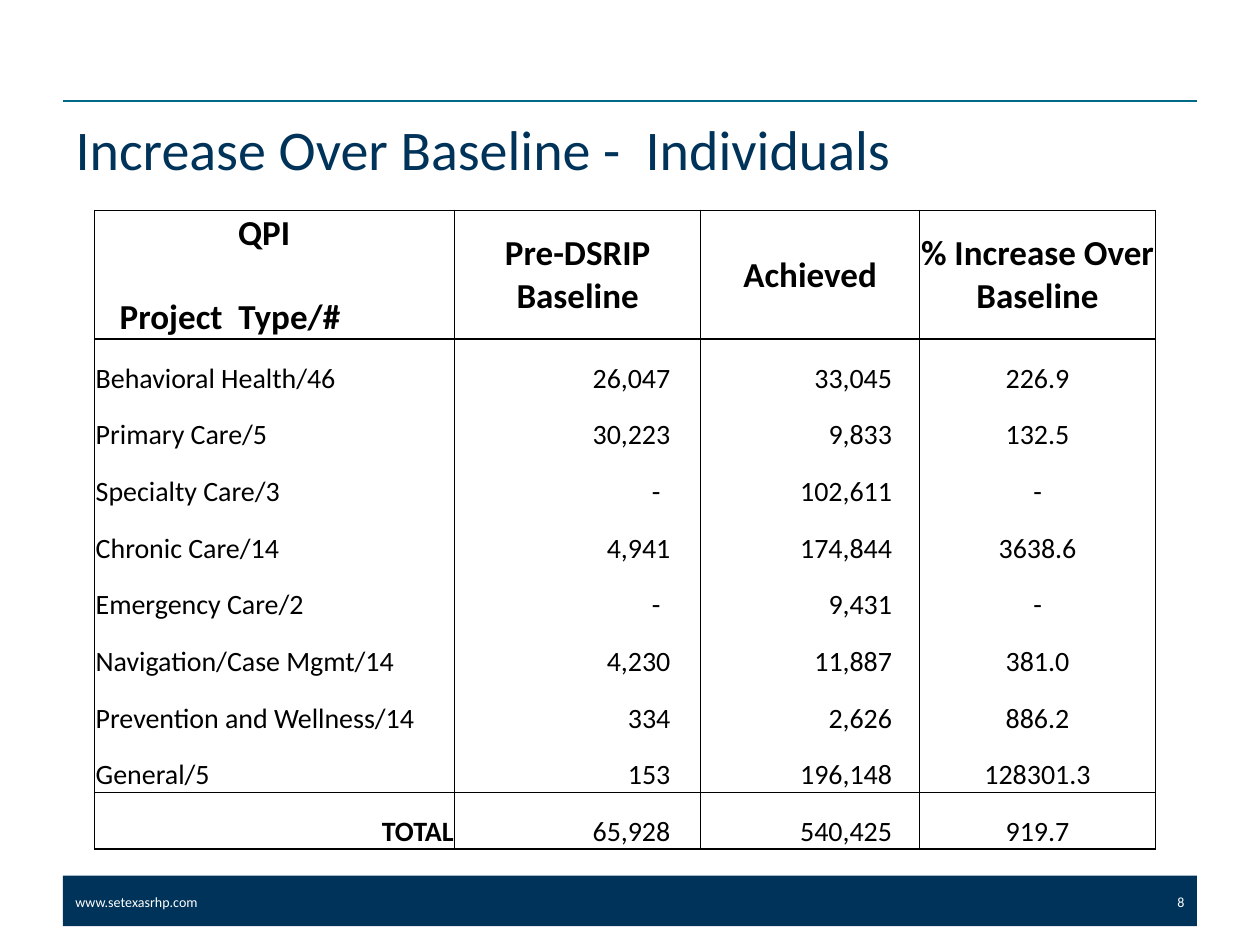
from dataclasses import dataclass

from lxml.etree import SubElement
from pptx import Presentation
from pptx.dml.color import RGBColor
from pptx.enum.shapes import MSO_CONNECTOR, MSO_SHAPE
from pptx.enum.text import MSO_ANCHOR, MSO_AUTO_SIZE, PP_ALIGN
from pptx.oxml.ns import qn
from pptx.util import Inches, Pt


@dataclass(frozen=True)
class Theme:
    face: str = "Calibri"
    navy: str = "003359"
    teal: str = "006983"
    black: str = "000000"
    white: str = "FFFFFF"
    title: int = 32
    head: int = 20
    body: int = 16
    foot: int = 8


THEME = Theme()
COLS = [2.86, 1.95, 1.74, 1.87]
HEAD_H, ROW_H = 1.02, 0.45
PAD = 0.01
INSETS = [PAD, 0.24, 0.22, PAD]
DASH_IN = 0.08
ALIGNS = [PP_ALIGN.LEFT, PP_ALIGN.RIGHT, PP_ALIGN.RIGHT, PP_ALIGN.CENTER]
HEADS = ["Pre-DSRIP Baseline", "Achieved", "% Increase Over Baseline"]
ROWS = [
    ["Behavioral Health/46", "26,047", "33,045", "226.9"],
    ["Primary Care/5", "30,223", "9,833", "132.5"],
    ["Specialty Care/3", "-", "102,611", "-"],
    ["Chronic Care/14", "4,941", "174,844", "3638.6"],
    ["Emergency Care/2", "-", "9,431", "-"],
    ["Navigation/Case Mgmt/14", "4,230", "11,887", "381.0"],
    ["Prevention and Wellness/14", "334", "2,626", "886.2"],
    ["General/5", "153", "196,148", "128301.3"],
    ["TOTAL", "65,928", "540,425", "919.7"],
]


def put(item, **values):
    for name, value in values.items():
        setattr(item, name, value)


def write(para, text, size, color, align=PP_ALIGN.LEFT, bold=False):
    run = para.add_run()
    run.text = text
    put(para, alignment=align)
    put(run.font, name=THEME.face, size=Pt(size), bold=bold)
    run.font.color.rgb = RGBColor.from_string(color)


def add_title(slide, text):
    title = slide.shapes.title
    put(title, left=Inches(0.5), top=Inches(0.8), width=Inches(9), height=Inches(0.75))
    frame = title.text_frame
    put(frame, vertical_anchor=MSO_ANCHOR.MIDDLE, auto_size=MSO_AUTO_SIZE.NONE)
    write(frame.paragraphs[0], text, THEME.title, THEME.navy)


def add_bar(slide):
    bar = slide.shapes.add_shape(
        MSO_SHAPE.RECTANGLE, Inches(0.5), Inches(6.95), Inches(9), Inches(0.4))
    bar.shadow.inherit = False
    bar.fill.solid()
    bar.fill.fore_color.rgb = RGBColor.from_string(THEME.navy)
    bar.line.fill.background()


def add_note(slide, text, left, width, align):
    box = slide.shapes.add_textbox(
        Inches(left), Inches(6.95), Inches(width), Inches(0.41))
    frame = box.text_frame
    put(frame, word_wrap=True, vertical_anchor=MSO_ANCHOR.MIDDLE)
    write(frame.paragraphs[0], text, THEME.foot, THEME.white, align)


def add_rule(slide):
    rule = slide.shapes.add_connector(
        MSO_CONNECTOR.STRAIGHT, Inches(0.5), Inches(0.8), Inches(9.5), Inches(0.8))
    rule.line.width = Pt(1)
    rule.line.color.rgb = RGBColor.from_string(THEME.teal)
    SubElement(rule._element.spPr, qn("a:effectLst"))


def edge(cell, side, width):
    line = SubElement(cell._tc.get_or_add_tcPr(), qn(f"a:ln{side}"), w=str(Pt(width)))
    if width:
        fill = SubElement(line, qn("a:solidFill"))
        SubElement(fill, qn("a:srgbClr"), val=THEME.black)
    else:
        SubElement(line, qn("a:noFill"))


def style(cell, row, col, anchor, inset=PAD):
    last = len(ROWS)
    widths = {
        "L": 0.5 if col else 1,
        "R": 0.5,
        "T": 1 if row in (0, 1, last) else 0,
        "B": 1 if row in (0, last - 1, last) else 0,
    }
    for side, width in widths.items():
        edge(cell, side, width)
    cell.fill.background()
    put(cell, vertical_anchor=anchor, margin_left=Inches(PAD),
        margin_right=Inches(inset), margin_top=Inches(PAD), margin_bottom=0)


def fill_head(table):
    first = table.cell(0, 0)
    style(first, 0, 0, MSO_ANCHOR.TOP)
    frame = first.text_frame
    paras = [frame.paragraphs[0], frame.add_paragraph()]
    for para, text, indent in zip(paras, ["QPI", "Project  Type/#"], [1.13, 0.19]):
        para._p.get_or_add_pPr().set("marL", str(Inches(indent)))
        write(para, text, THEME.head, THEME.black, bold=True)
    paras[1].space_before = Pt(24)
    for col, text in enumerate(HEADS, 1):
        cell = table.cell(0, col)
        style(cell, 0, col, MSO_ANCHOR.MIDDLE)
        write(cell.text_frame.paragraphs[0], text, THEME.head, THEME.black,
              PP_ALIGN.CENTER, True)


def fill_body(table):
    for row, texts in enumerate(ROWS, 1):
        for col, text in enumerate(texts):
            total = text == "TOTAL"
            align = PP_ALIGN.RIGHT if total else ALIGNS[col]
            inset = INSETS[col]
            if text == "-" and align == PP_ALIGN.RIGHT:
                inset += DASH_IN
            cell = table.cell(row, col)
            style(cell, row, col, MSO_ANCHOR.BOTTOM, inset)
            write(cell.text_frame.paragraphs[0], text, THEME.body, THEME.black,
                  align, total)


def add_grid(slide):
    count = len(ROWS) + 1
    table = slide.shapes.add_table(
        count, len(COLS), Inches(0.75), Inches(1.67), Inches(sum(COLS)),
        Inches(HEAD_H + ROW_H * len(ROWS))).table
    put(table, first_row=False, horz_banding=False)
    for col, width in zip(table.columns, COLS):
        col.width = Inches(width)
    for row, height in zip(table.rows, [HEAD_H] + [ROW_H] * len(ROWS)):
        row.height = Inches(height)
    fill_head(table)
    fill_body(table)


def main():
    deck = Presentation()
    put(deck, slide_width=Inches(10), slide_height=Inches(7.5))
    slide = deck.slides.add_slide(deck.slide_layouts[5])
    add_bar(slide)
    add_note(slide, "www.setexasrhp.com", 0.5, 3.08, PP_ALIGN.LEFT)
    add_note(slide, "8", 8, 1.5, PP_ALIGN.RIGHT)
    add_rule(slide)
    add_title(slide, "Increase Over Baseline -  Individuals")
    add_grid(slide)
    deck.save("out.pptx")


if __name__ == "__main__":
    main()
